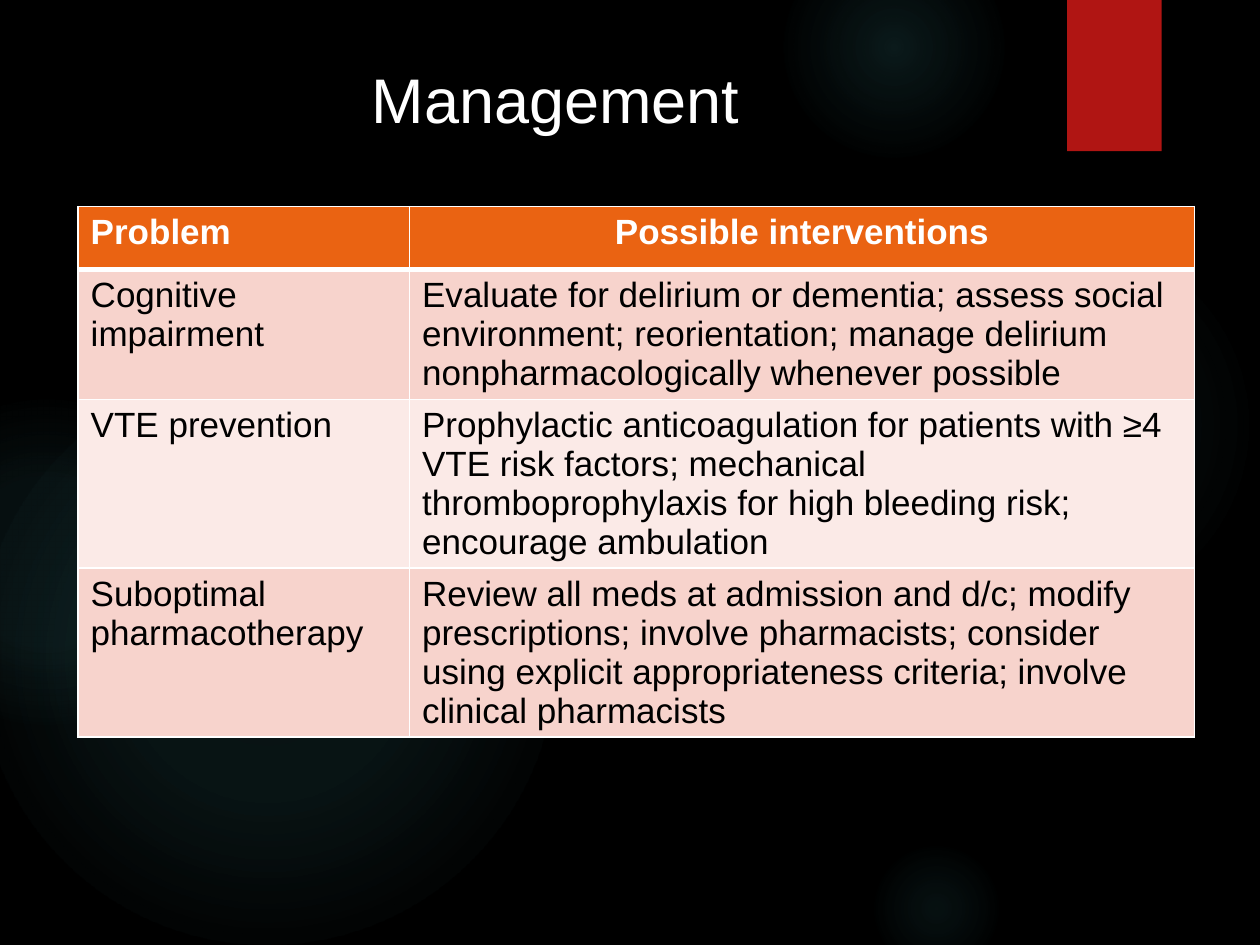
"""Build the Management slide: soft glows, a red tab, a title and a table."""
from lxml import etree
from pptx import Presentation
from pptx import util as u
from pptx.dml.color import RGBColor
from pptx.enum import shapes, text
from pptx.oxml import parse_xml
from pptx.oxml.ns import nsdecls

HUES = {"back": "000000", "glow": "50B9C1", "tab": "B01513", "head": "EA6312",
        "odd": "F7D3CC", "even": "FBEAE7", "light": "FFFFFF", "dark": "000000"}
GLOWS = [
    (6.89, 1.83, 3.08, (7, 6), 69),
    (6.22, -0.5, 1.75, (14, 7), 73),
    (6.89, 6.67, 1.08, (9, 5), 66),
    (-0.17, 2.92, 4.58, (11, 10), 75),
    (-0.92, 3.17, 2.58, (8, 8), 72),
]
ROWS = [
    ("Problem", "Possible interventions"),
    ("Cognitive impairment",
     "Evaluate for delirium or dementia; assess social environment; "
     "reorientation; manage delirium nonpharmacologically whenever possible"),
    ("VTE prevention",
     "Prophylactic anticoagulation for patients with ≥4 VTE risk factors; "
     "mechanical thromboprophylaxis for high bleeding risk; encourage ambulation"),
    ("Suboptimal pharmacotherapy",
     "Review all meds at admission and d/c; modify prescriptions; involve "
     "pharmacists; consider using explicit appropriateness criteria; "
     "involve clinical pharmacists"),
]


def write(frame, words, size=20, hue="dark", bold=False, mid=False):
    para = frame.paragraphs[0]
    para.alignment = text.PP_ALIGN.CENTER if mid else text.PP_ALIGN.LEFT
    run = para.add_run()
    run.text = words
    run.font.name = "Arial"
    run.font.size = u.Pt(size)
    run.font.bold = bold
    run.font.color.rgb = RGBColor.from_string(HUES[hue])


def edge(cell, side, width):
    props = cell._tc.get_or_add_tcPr()
    props.append(parse_xml(
        f'<a:ln{side} {nsdecls("a")} w="{u.Pt(width)}"><a:solidFill>'
        f'<a:srgbClr val="{HUES["light"]}"/></a:solidFill></a:ln{side}>'))


deck = Presentation()
deck.slide_width, deck.slide_height = u.Inches(10), u.Inches(7.5)
slide = deck.slides.add_slide(deck.slide_layouts[6])
slide.background.fill.solid()
slide.background.fill.fore_color.rgb = RGBColor.from_string(HUES["back"])

for left, top, size, (core, ring), end in GLOWS:
    glow = slide.shapes.add_shape(
        shapes.MSO_SHAPE.OVAL, u.Inches(left), u.Inches(top),
        u.Inches(size), u.Inches(size))
    glow.shadow.inherit = False
    glow.line.fill.background()
    stops = "".join(
        f'<a:gs pos="{pos * 1000}"><a:srgbClr val="{HUES["glow"]}">'
        f'<a:alpha val="{alpha * 1000}"/></a:srgbClr></a:gs>'
        for pos, alpha in ((0, core), (36, ring), (end, 0)))
    fill = parse_xml(
        f'<a:gradFill {nsdecls("a")} rotWithShape="1"><a:gsLst>{stops}</a:gsLst>'
        '<a:path path="circle"><a:fillToRect l="50000" t="50000" r="50000" '
        'b="50000"/></a:path></a:gradFill>')
    glow._element.spPr.prstGeom.addnext(fill)

tab = slide.shapes.add_shape(
    shapes.MSO_SHAPE.RECTANGLE, u.Inches(8.47), 0, u.Inches(0.75), u.Inches(1.2))
tab.shadow.inherit = False
tab.fill.solid()
tab.fill.fore_color.rgb = RGBColor.from_string(HUES["tab"])
tab.line.fill.background()

grid = slide.shapes.add_table(
    len(ROWS), 2, u.Inches(0.62), u.Inches(1.64),
    u.Inches(8.86), u.Inches(3.36)).table
for col, width in zip(grid.columns, (2.63, 6.23)):
    col.width = u.Inches(width)
for row, height in zip(grid.rows, (0.5, 0.83, 1.2, 0.83)):
    row.height = u.Inches(height)

for r, row in enumerate(ROWS):
    head = r == 0
    for c, words in enumerate(row):
        cell = grid.cell(r, c)
        write(cell.text_frame, words, hue="light" if head else "dark",
              bold=head, mid=head and c == 1)
        for side in "LRTB":
            thick = (head and side == "B") or (r == 1 and side == "T")
            edge(cell, side, 3 if thick else 1)
        cell.fill.solid()
        shade = "head" if head else "odd" if r % 2 else "even"
        cell.fill.fore_color.rgb = RGBColor.from_string(HUES[shade])

title = slide.shapes.add_textbox(
    u.Inches(0.51), u.Inches(0.36), u.Inches(7.8), u.Inches(0.5)).text_frame
title.word_wrap = True
title.margin_top = u.Inches(0.12)
write(title, "Management", size=36, hue="light", mid=True)

deck.save("out.pptx")
